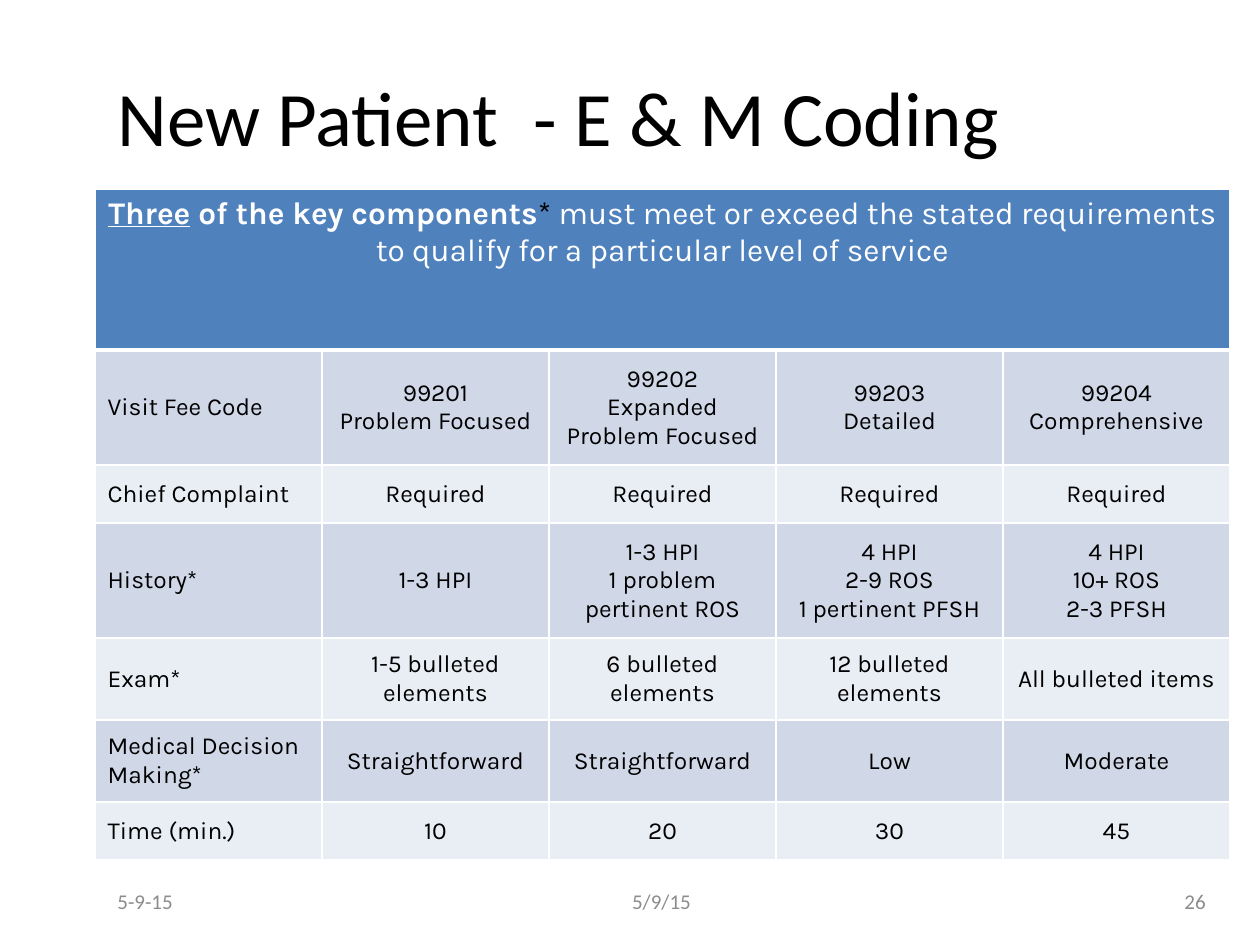
from dataclasses import dataclass

from lxml import etree
from pptx import Presentation
from pptx.dml.color import RGBColor
from pptx.enum.text import MSO_ANCHOR, PP_ALIGN
from pptx.oxml.ns import qn
from pptx.util import Emu, Pt

LEFT, MID, RIGHT = PP_ALIGN.LEFT, PP_ALIGN.CENTER, PP_ALIGN.RIGHT
TOP, CENTER = MSO_ANCHOR.TOP, MSO_ANCHOR.MIDDLE
DPI = 126


@dataclass(frozen=True)
class Theme:
    plain: str = "Calibri"
    grid: str = "Karla"
    ink: str = "000000"
    white: str = "FFFFFF"
    gray: str = "8C8C8C"
    head: str = "4F81BD"
    bands: tuple = ("D0D8E8", "E9EDF4")
    title: int = 44
    lead: int = 18
    body: int = 14
    foot: int = 12


def px(n):
    return Emu(round(n * 914400 / DPI))


class Page:
    def __init__(self, slide, theme):
        self.slide = slide
        self.theme = theme

    def run(self, par, text, font, size, color, bold=False, line=False):
        """Add text to a paragraph, one run per line."""
        for i, part in enumerate(text.split("\n")):
            if i:
                par.add_line_break()
            run = par.add_run()
            run.text = part
            run.font.name = font
            run.font.size = Pt(size)
            run.font.bold = bold
            run.font.underline = line
            run.font.color.rgb = RGBColor.from_string(color)

    def text(self, x, y, w, h, text, size, color, align=LEFT):
        box = self.slide.shapes.add_textbox(px(x), px(y), px(w), px(h))
        frame = box.text_frame
        frame.word_wrap = True
        frame.vertical_anchor = CENTER
        par = frame.paragraphs[0]
        par.alignment = align
        self.run(par, text, self.theme.plain, size, color)

    def paint(self, cell, fill, base=1):
        """Set the borders and fill; base is the bottom width in points."""
        props = cell._tc.get_or_add_tcPr()
        for side, width in (("L", 1), ("R", 1), ("T", 1), ("B", base)):
            edge = etree.SubElement(props, qn(f"a:ln{side}"), w=str(Pt(width)))
            solid = etree.SubElement(edge, qn("a:solidFill"))
            etree.SubElement(solid, qn("a:srgbClr"), val=self.theme.white)
        cell.fill.solid()
        cell.fill.fore_color.rgb = RGBColor.from_string(fill)

    def banner(self, grid, runs):
        """Fill the merged top row."""
        t = self.theme
        cells = list(grid.rows[0].cells)
        for cell in cells:
            self.paint(cell, t.head, 3)
        cells[0].merge(cells[-1])
        cells[0].vertical_anchor = TOP
        par = cells[0].text_frame.paragraphs[0]
        par.alignment = MID
        for text, color, bold, line in runs:
            self.run(par, text, t.grid, t.lead, color, bold, line)

    def cell(self, cell, text, fill, align):
        """Fill one body cell; a tuple holds separate paragraphs."""
        t = self.theme
        self.paint(cell, fill)
        cell.vertical_anchor = CENTER
        frame = cell.text_frame
        for i, part in enumerate(text if isinstance(text, tuple) else (text,)):
            par = frame.add_paragraph() if i else frame.paragraphs[0]
            par.alignment = align
            self.run(par, part, t.grid, t.body, t.ink)

    def table(self, x, y, wide, highs, lead, rows):
        cols = len(rows[0])
        grid = self.slide.shapes.add_table(
            len(highs), cols, px(x), px(y), px(wide * cols), px(sum(highs))
        ).table
        for col in grid.columns:
            col.width = px(wide)
        for row, high in zip(grid.rows, highs):
            row.height = px(high)
        self.banner(grid, lead)
        for r, row in enumerate(rows):
            fill = self.theme.bands[r % 2]
            for c, text in enumerate(row):
                self.cell(grid.cell(r + 1, c), text, fill, MID if c else LEFT)


ROWS = [
    ["Visit Fee Code", "99201\nProblem Focused", "99202\nExpanded Problem Focused",
     "99203\nDetailed", "99204\nComprehensive"],
    ["Chief Complaint"] + ["Required"] * 4,
    ["History*", "1-3 HPI", "1-3 HPI\n1 problem pertinent ROS",
     ("4 HPI", "2-9 ROS", "1 pertinent PFSH"), "4 HPI\n10+ ROS\n2-3 PFSH"],
    ["Exam*", "1-5 bulleted elements", "6 bulleted elements",
     "12 bulleted elements", "All bulleted items"],
    ["Medical Decision Making*", "Straightforward", "Straightforward", "Low", "Moderate"],
    ["Time (min.)", "10", "20", "30", "45"],
]
HIGHS = [161, 115, 58, 115, 82, 82, 58]


def main():
    deck = Presentation()
    deck.slide_width, deck.slide_height = px(1260), px(945)
    t = Theme()
    page = Page(deck.slides.add_slide(deck.slide_layouts[6]), t)
    page.text(105, 37, 1113, 158, "New Patient  - E & M Coding", t.title, t.ink)
    lead = [
        ("Three", t.white, True, True),
        (" of the key components", t.white, True, False),
        ("* ", t.ink, False, False),
        ("must meet or exceed the stated requirements to qualify for "
         "a particular level of service", t.white, False, False),
    ]
    page.table(95, 189, 227, HIGHS, lead, ROWS)
    for x, w, text, align in (
        (105, 294, "5-9-15", LEFT),
        (924, 294, "26", RIGHT),
        (462, 399, "5/9/15", MID),
    ):
        page.text(x, 876, w, 50, text, t.foot, t.gray, align)
    deck.save("out.pptx")


if __name__ == "__main__":
    main()
